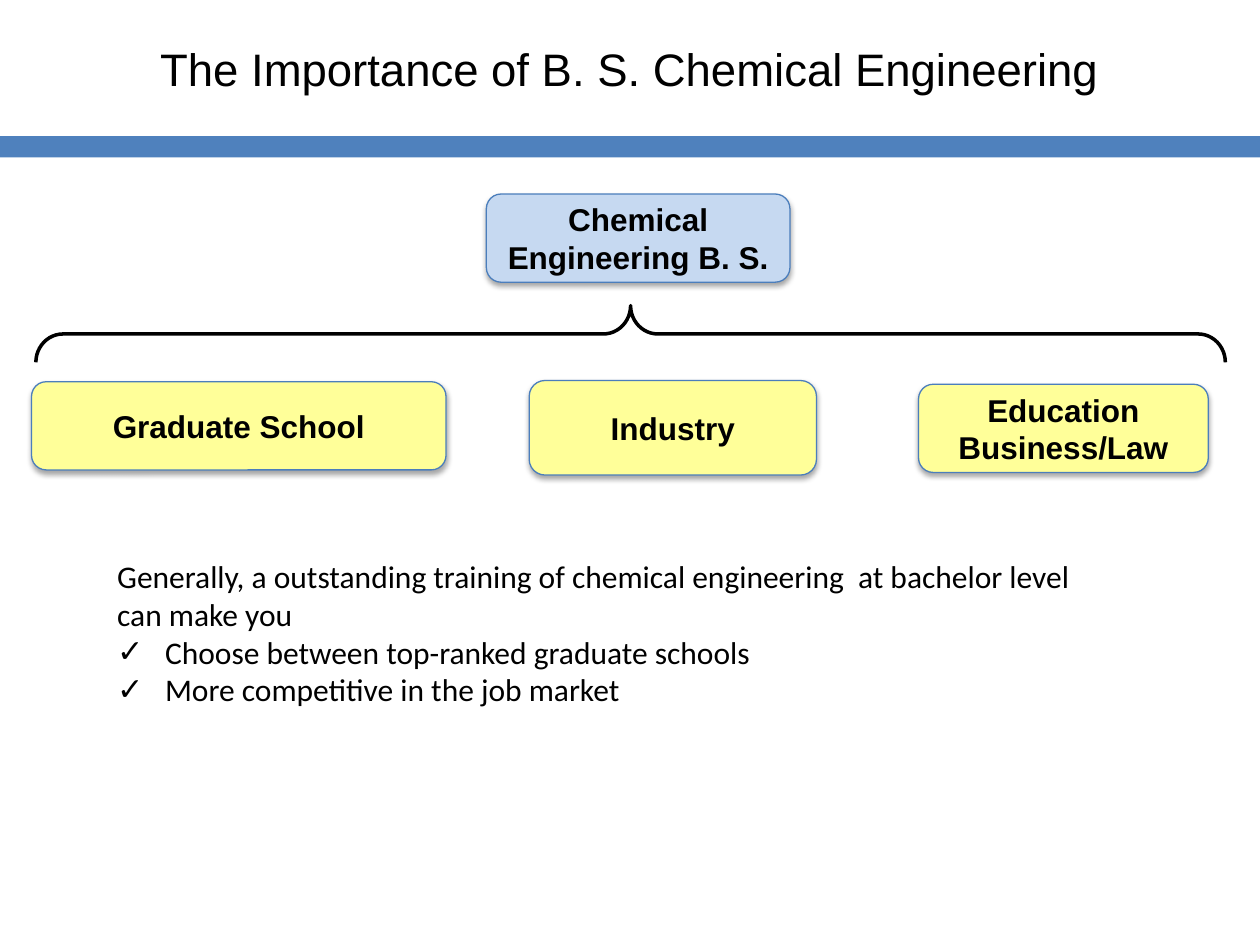
from pptx import Presentation
from pptx.dml.color import RGBColor
from pptx.enum.shapes import MSO_SHAPE as Preset
from pptx.enum.text import MSO_ANCHOR as Anchor, MSO_AUTO_SIZE as AutoSize, PP_ALIGN as Align
from pptx.oxml import parse_xml
from pptx.oxml.ns import nsdecls, qn
from pptx.util import Inches, Pt

BLACK = RGBColor(0x00, 0x00, 0x00)
BAR_BLUE = RGBColor(0x4F, 0x81, 0xBD)
EDGE_BLUE = RGBColor(0x4B, 0x7E, 0xBC)
PALE_BLUE = RGBColor(0xC6, 0xD9, 0xF1)
YELLOW = RGBColor(0xFF, 0xFF, 0x99)


def add_text(para, text, font, size, bold=False):
    span = para.add_run()
    span.text = text
    span.font.name = font
    span.font.size = Pt(size)
    span.font.bold = bold
    span.font.color.rgb = BLACK


def add_shape(preset, left, top, width, height):
    shape = page.shapes.add_shape(preset, Inches(left), Inches(top), Inches(width), Inches(height))
    shape.shadow.inherit = False
    return shape


deck = Presentation()
deck.slide_width, deck.slide_height = Inches(10), Inches(7.5)
page = deck.slides.add_slide(deck.slide_layouts[1])

# Title and the bar under it
title = page.shapes.title
title.left, title.top, title.width, title.height = Inches(0.5), Inches(0), Inches(9), Inches(1.08)
title.text_frame.vertical_anchor = Anchor.MIDDLE
para = title.text_frame.paragraphs[0]
para.alignment = Align.CENTER
add_text(para, "The Importance of B. S. Chemical Engineering", "Arial", 26)

bar = add_shape(Preset.RECTANGLE, 0, 1.08, 10, 0.17)
bar.fill.solid()
bar.fill.fore_color.rgb = BAR_BLUE
bar.line.fill.background()

# Degree and the career paths it opens
boxes = [
    (3.86, 1.54, 2.41, 0.7, PALE_BLUE, ["Chemical Engineering B. S."]),
    (0.25, 3.03, 3.29, 0.7, YELLOW, ["Graduate School"]),
    (4.2, 3.02, 2.28, 0.75, YELLOW, ["Industry"]),
    (7.29, 3.05, 2.3, 0.7, YELLOW, ["Education", "Business/Law"]),
]
for left, top, width, height, color, lines in boxes:
    box = add_shape(Preset.ROUNDED_RECTANGLE, left, top, width, height)
    box.fill.solid()
    box.fill.fore_color.rgb = color
    box.line.color.rgb = EDGE_BLUE
    box.line.width = Pt(0.75)
    box._element.spPr.find(qn("a:effectLst")).append(parse_xml(
        f'<a:outerShdw {nsdecls("a")} blurRad="{Pt(3.1)}" dist="{Pt(1.8)}" dir="5400000" rotWithShape="0">'
        '<a:srgbClr val="000000"><a:alpha val="35000"/></a:srgbClr></a:outerShdw>'))
    frame = box.text_frame
    frame.word_wrap = True
    frame.vertical_anchor = Anchor.MIDDLE
    for index, line in enumerate(lines):
        para = frame.add_paragraph() if index else frame.paragraphs[0]
        para.alignment = Align.CENTER
        add_text(para, line, "Arial", 18, bold=True)

# Brace, turned to point up at the degree
brace = add_shape(Preset.RIGHT_BRACE, 4.78, -2.07, 0.45, 9.44)
brace.rotation = 270
brace.adjustments[0] = 0.48
brace.adjustments[1] = 0.5
brace.fill.background()
brace.line.color.rgb = BLACK
brace.line.width = Pt(2)

# Closing remark with its checklist
body = page.placeholders[1]
body.left, body.top, body.width, body.height = Inches(0.83), Inches(4.37), Inches(7.97), Inches(1.31)
frame = body.text_frame
frame.word_wrap = True
frame.auto_size = AutoSize.SHAPE_TO_FIT_TEXT
frame.vertical_anchor = Anchor.TOP
remarks = [
    ("Generally, a outstanding training of chemical engineering  at bachelor level can make you", False),
    ("Choose between top-ranked graduate schools", True),
    ("More competitive in the job market", True),
]
for index, (text, checked) in enumerate(remarks):
    para = frame.add_paragraph() if index else frame.paragraphs[0]
    para.alignment = Align.LEFT
    para.space_before = Pt(0)
    indent = Inches(0.38) if checked else 0
    props = para._p.get_or_add_pPr()
    props.set("marL", str(indent))
    props.set("indent", str(-indent))
    bullet = '<a:buChar {} char="✓"/>' if checked else "<a:buNone {}/>"
    props.append(parse_xml(bullet.format(nsdecls("a"))))
    add_text(para, text, "Calibri", 18)

deck.save("out.pptx")
